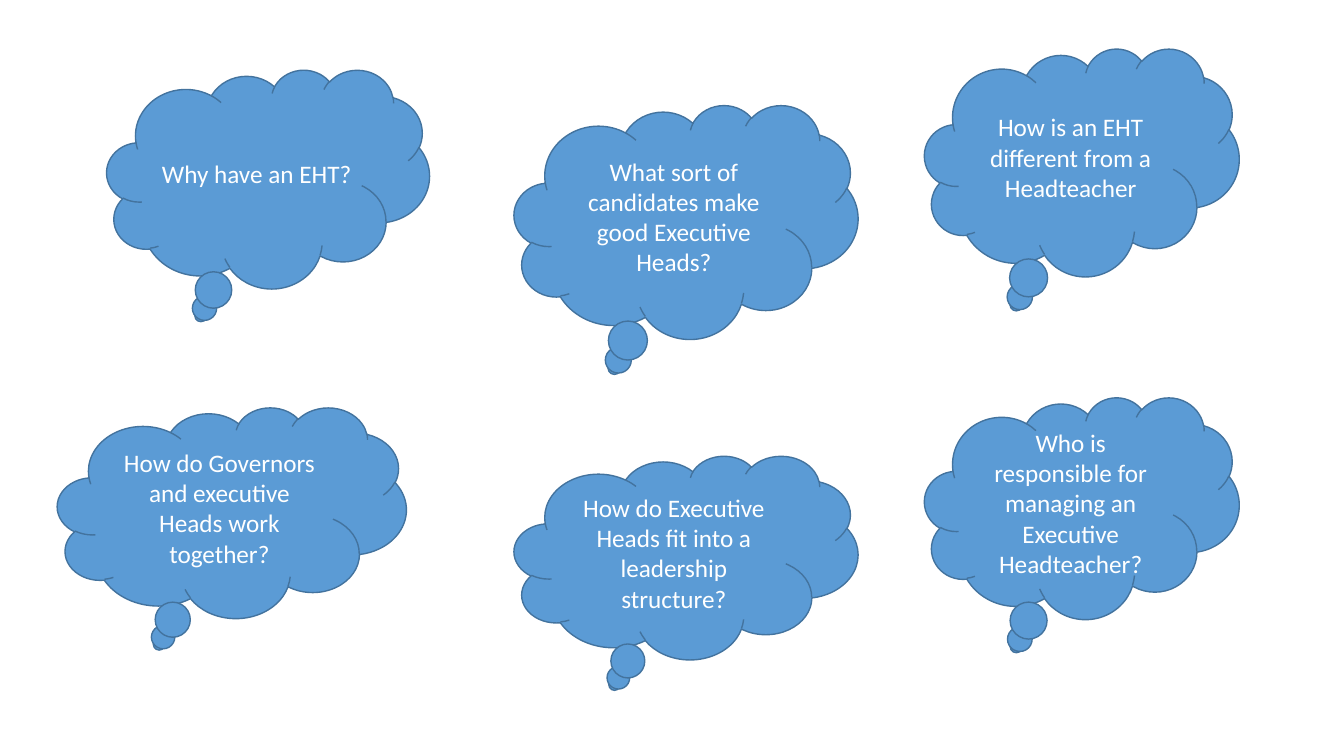
from dataclasses import dataclass

from pptx import Presentation
from pptx.dml.color import RGBColor
from pptx.enum.shapes import MSO_SHAPE as Shape
from pptx.enum.text import MSO_ANCHOR as Anchor, PP_ALIGN as Align
from pptx.util import Emu, Pt

EMU_PER_PX = 9144
SLIDE_SIZE = (1333, 750)
BLANK_LAYOUT = 6


@dataclass(frozen=True)
class Theme:
    cloud_fill: RGBColor = RGBColor(0x5B, 0x9B, 0xD5)
    cloud_outline: RGBColor = RGBColor(0x43, 0x73, 0x9E)
    text: RGBColor = RGBColor(0xFF, 0xFF, 0xFF)
    font: str = "Calibri"
    text_size: Pt = Pt(18)
    outline_width: Pt = Pt(1)


THEME = Theme()

QUESTIONS = [
    ("Why have an EHT?", (106, 69, 320, 217)),
    ("How is an EHT different from a Headteacher", (917, 48, 312, 226)),
    ("What sort of candidates make good Executive Heads?", (510, 104, 341, 232)),
    ("How do Governors and executive Heads work together?", (57, 404, 346, 209)),
    ("Who is responsible for managing an Executive Headteacher?", (917, 394, 312, 220)),
    ("How do Executive Heads fit into a leadership structure?", (510, 452, 341, 202)),
]


def px(length):
    return Emu(length * EMU_PER_PX)


def write_centred(shape, text):
    frame = shape.text_frame
    frame.word_wrap = True
    frame.vertical_anchor = Anchor.MIDDLE
    paragraph = frame.paragraphs[0]
    paragraph.alignment = Align.CENTER
    run = paragraph.add_run()
    run.text = text
    run.font.name = THEME.font
    run.font.size = THEME.text_size
    run.font.color.rgb = THEME.text


def add_thought_cloud(slide, question, box):
    cloud = slide.shapes.add_shape(Shape.CLOUD_CALLOUT, *map(px, box))
    cloud.shadow.inherit = False
    cloud.fill.solid()
    cloud.fill.fore_color.rgb = THEME.cloud_fill
    cloud.line.color.rgb = THEME.cloud_outline
    cloud.line.width = THEME.outline_width
    write_centred(cloud, question)


def main():
    presentation = Presentation()
    presentation.slide_width, presentation.slide_height = map(px, SLIDE_SIZE)
    slide = presentation.slides.add_slide(presentation.slide_layouts[BLANK_LAYOUT])
    for question, box in QUESTIONS:
        add_thought_cloud(slide, question, box)
    presentation.save("out.pptx")


if __name__ == "__main__":
    main()
